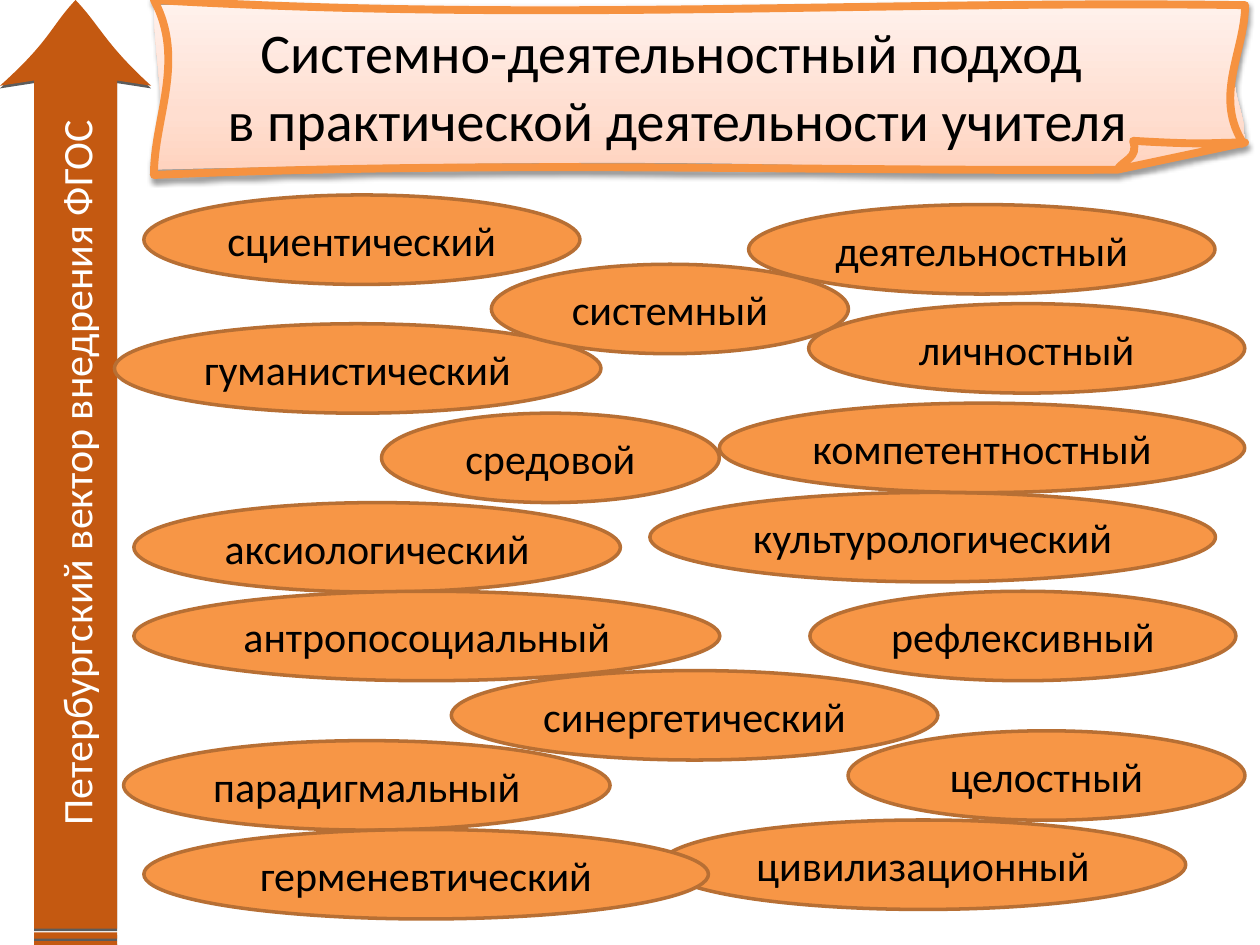
"""Build a slide of pedagogical approaches beside a tall arrow under a scroll banner."""
from copy import deepcopy
from typing import NamedTuple

from lxml.etree import SubElement
from pptx import Presentation
from pptx.dml.color import RGBColor
from pptx.enum.shapes import MSO_SHAPE
from pptx.enum.text import MSO_ANCHOR as Anchor, PP_ALIGN as Align
from pptx.oxml.ns import qn
from pptx.util import Pt

BLACK = RGBColor(0x00, 0x00, 0x00)
WHITE = RGBColor(0xFF, 0xFF, 0xFF)
ORANGE = RGBColor(0xF7, 0x96, 0x46)
BROWN = RGBColor(0xB7, 0x6F, 0x34)
RUST = RGBColor(0xC4, 0x59, 0x11)
SCROLL_EDGE = RGBColor(0xF6, 0x92, 0x40)
SCROLL_STOPS = (
    (0, RGBColor(0xFF, 0xD2, 0xBD)),
    (0.35, RGBColor(0xFF, 0xDE, 0xD0)),
    (1, RGBColor(0xFF, 0xF2, 0xED)),
)
FONT = "Calibri"
OVAL_HEIGHT = 51.1


class Oval(NamedTuple):
    text: str
    left: float
    top: float
    width: float


class Box(NamedTuple):
    left: float
    top: float
    width: float
    height: float


class Contour(NamedTuple):
    """A start and its segments: one point makes a line, three make a curve."""
    start: tuple
    segments: tuple
    closed: bool = True


class Path(NamedTuple):
    contours: tuple
    filled: bool = True
    stroked: bool = True


class Shadow(NamedTuple):
    blur: float
    distance: float
    opacity: int


OVALS = (
    Oval("сциентический", 82.2, 111.4, 249.2),
    Oval("гуманистический", 65.4, 185, 278),
    Oval("деятельностный", 427.8, 116.9, 266.5),
    Oval("личностный", 462.1, 173.5, 249.2),
    Oval("аксиологический", 76.5, 287.2, 278),
    Oval("культурологический", 371.4, 281.4, 323.2),
    Oval("антропосоциальный", 76.5, 337.9, 334.8),
    Oval("целостный", 484.6, 417.6, 226.8),
    Oval("системный", 280.8, 151, 204),
    Oval("парадигмальный", 70.6, 423.2, 278),
    Oval("цивилизационный", 377.4, 468.6, 300.2),
    Oval("средовой", 218, 236.1, 193),
    Oval("герменевтический", 82.2, 474, 322.6),
    Oval("рефлексивный", 462.8, 337.9, 243.4),
    Oval("синергетический", 257.9, 383.2, 278),
    Oval("компетентностный", 411.1, 230.4, 300.2),
)

SCROLL_BOX = Box(88, 0, 623.5, 100)
CURL, TIP = (550.5, 97), (623.5, 81.5)
SCROLL_PATHS = (
    Path((Contour((0, 3), (
        ((623.5, 3),),
        ((609, 54), (623.5, 55.5), TIP),
        ((578.5, 87), (594, 91.5), CURL),
        ((367, 97), (360, 88), (0, 97)),
        ((9, 65), (0, 34.5), (0, 3)),
    )),), stroked=False),
    Path((Contour(CURL, (((572, 80.5),), (TIP,), (CURL,))),), stroked=False),
    Path((Contour(CURL, (
        ((553.5, 91.5), (563, 90.5), (559.5, 80.5)),
        ((602.5, 83), (602, 81.5), TIP),
        (CURL,),
        ((367, 98), (199.5, 91.5), (0, 100)),
        ((0, 67.5), (18.5, 34.5), (0, 0)),
        ((222.5, 13), (415.5, 0), (623.5, 3)),
        ((623.5, 29.5), (604.5, 56), (623.5, 83.5)),
    ), closed=False),), filled=False),
)

ARROW_BOX = Box(-226.8, 226.8, 540, 86.4)
SHAFT_TOP, SHAFT_BOTTOM = 19.5, 67


def stripe(left: float, right: float) -> Contour:
    """Return a bar as thick as the arrow's shaft."""
    corners = ((left, SHAFT_BOTTOM), (right, SHAFT_BOTTOM), (right, SHAFT_TOP))
    return Contour((left, SHAFT_TOP), tuple((corner,) for corner in corners))


ARROW_PATHS = (Path((
    stripe(0, 2.2),
    stripe(3.6, 7.2),
    Contour((9.4, SHAFT_TOP), (
        ((494, SHAFT_TOP),),
        ((491, 0),),
        ((517, 29), (525, 29), (540, 43.2)),
        ((525, 57.5), (515, 60), (491, 86.4)),
        ((494, SHAFT_BOTTOM),),
        ((9.4, SHAFT_BOTTOM),),
    )),
)),)


def add_command(path, name: str, points: tuple) -> None:
    """Append one drawing command with its points."""
    command = SubElement(path, qn(f"a:{name}"))
    for x, y in points:
        SubElement(command, qn("a:pt"), x=str(Pt(x)), y=str(Pt(y)))


def add_outline(slide, box: Box, paths: tuple):
    """Add one freeform whose paths keep their true curves."""
    left, top, width, height = (Pt(length) for length in box)
    builder = slide.shapes.build_freeform(left, top)
    builder.add_line_segments([(left + width, top), (left + width, top + height)])
    shape = builder.convert_to_shape()
    shape.shadow.inherit = False
    path_list = shape._element.spPr.find(qn("a:custGeom")).find(qn("a:pathLst"))
    path_list.clear()
    for path in paths:
        element = SubElement(path_list, qn("a:path"), w=str(width), h=str(height))
        if not path.filled:
            element.set("fill", "none")
        if not path.stroked:
            element.set("stroke", "0")
        for contour in path.contours:
            add_command(element, "moveTo", (contour.start,))
            for segment in contour.segments:
                add_command(element, "lnTo" if len(segment) == 1 else "cubicBezTo", segment)
            if contour.closed:
                SubElement(element, qn("a:close"))
    return shape


def add_shadow(shape, shadow: Shadow) -> None:
    """Give a shape a black shadow that falls straight down."""
    effects = shape._element.spPr.find(qn("a:effectLst"))
    outer = SubElement(effects, qn("a:outerShdw"), blurRad=str(Pt(shadow.blur)),
                       dist=str(Pt(shadow.distance)), dir="5400000", rotWithShape="0")
    color = SubElement(outer, qn("a:srgbClr"), val=str(BLACK))
    SubElement(color, qn("a:alpha"), val=str(shadow.opacity * 1000))


def fill_scroll(shape) -> None:
    """Fill a shape with the scroll's gradient, rising from bottom to top."""
    shape.fill.gradient()
    shape.fill.gradient_angle = 90
    stop_list = shape._element.spPr.find(qn("a:gradFill")).find(qn("a:gsLst"))
    stop_list.insert(1, deepcopy(stop_list[0]))
    for stop, (position, color) in zip(shape.fill.gradient_stops, SCROLL_STOPS):
        stop.position = position
        stop.color.rgb = color


def write(shape, text: str, size: float, color: RGBColor) -> None:
    """Set centred text in a shape."""
    frame = shape.text_frame
    frame.word_wrap = True
    frame.vertical_anchor = Anchor.MIDDLE
    paragraph = frame.paragraphs[0]
    paragraph.text = text
    paragraph.alignment = Align.CENTER
    for run in paragraph.runs:
        run.font.name = FONT
        run.font.size = Pt(size)
        run.font.color.rgb = color


def add_scroll(slide) -> None:
    """Draw the scroll banner and its title."""
    scroll = add_outline(slide, SCROLL_BOX, SCROLL_PATHS)
    fill_scroll(scroll)
    scroll.line.color.rgb = SCROLL_EDGE
    scroll.line.width = Pt(4.5)
    add_shadow(scroll, Shadow(3.1, 1.6, 38))
    title = slide.shapes.add_textbox(Pt(63.4), Pt(3.6), Pt(648), Pt(90))
    write(title, "Системно-деятельностный подход \vв практической деятельности учителя", 32, BLACK)


def add_arrow(slide) -> None:
    """Draw the striped arrow, turned to point up with its text."""
    arrow = add_outline(slide, ARROW_BOX, ARROW_PATHS)
    arrow.rotation = 270
    arrow.fill.solid()
    arrow.fill.fore_color.rgb = RUST
    arrow.line.fill.background()
    add_shadow(arrow, Shadow(0, 1.5, 63))
    write(arrow, "Петербургский вектор внедрения ФГОС", 24, WHITE)


def add_oval(slide, oval: Oval) -> None:
    """Draw one approach as a labelled ellipse."""
    shape = slide.shapes.add_shape(
        MSO_SHAPE.OVAL, Pt(oval.left), Pt(oval.top), Pt(oval.width), Pt(OVAL_HEIGHT))
    shape.shadow.inherit = False
    shape.fill.solid()
    shape.fill.fore_color.rgb = ORANGE
    shape.line.color.rgb = BROWN
    shape.line.width = Pt(2)
    write(shape, oval.text, 24, BLACK)


def main() -> None:
    """Build and save the presentation."""
    presentation = Presentation()
    presentation.slide_width, presentation.slide_height = Pt(720), Pt(540)
    slide = presentation.slides.add_slide(presentation.slide_layouts[6])
    add_scroll(slide)
    add_arrow(slide)
    for oval in OVALS:
        add_oval(slide, oval)
    presentation.save("out.pptx")


if __name__ == "__main__":
    main()
